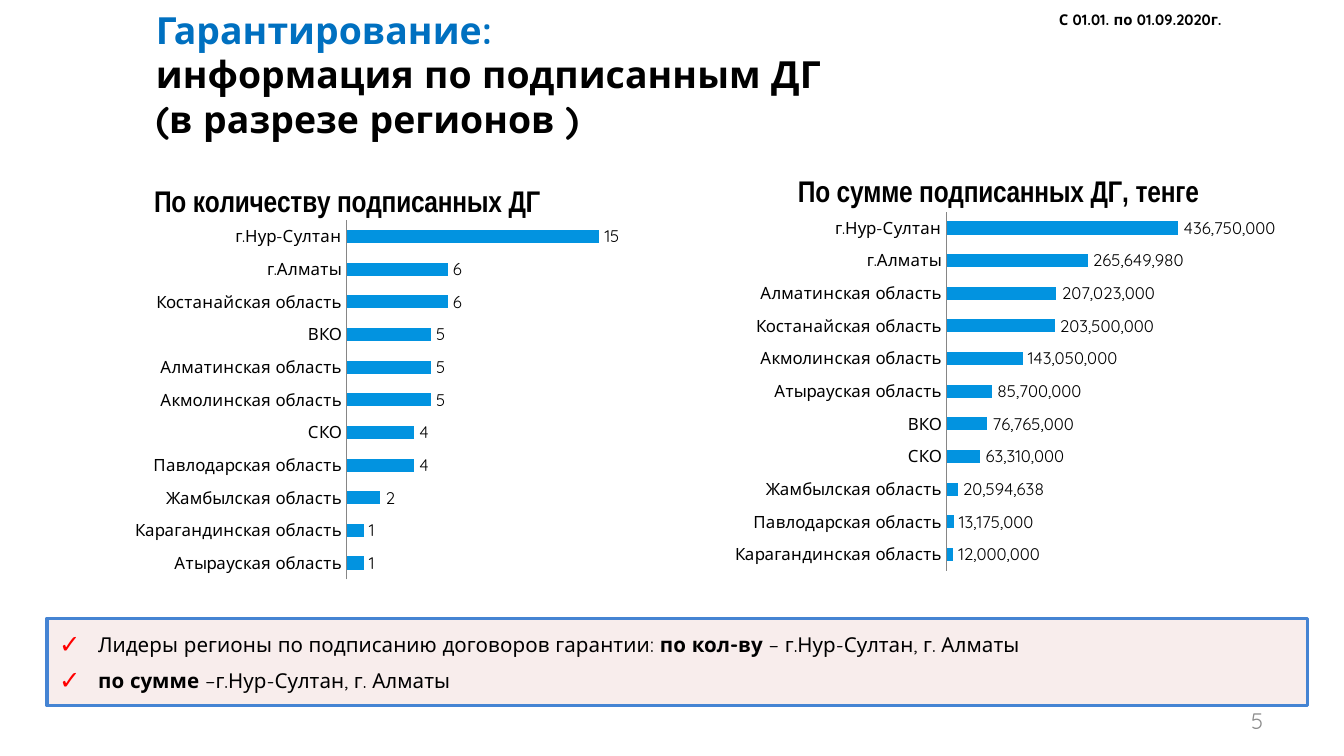
"""Build the slide on signed guarantee agreements by region."""
import dataclasses
import typing

import lxml.etree
import pptx
import pptx.chart.data
import pptx.dml.color
import pptx.enum.chart
import pptx.enum.text
import pptx.oxml.ns
import pptx.util

Inches = pptx.util.Inches
Pt = pptx.util.Pt
FONT = "Quicksand"
COLORS = {
    "text": "000000", "heading": "0070C0", "number": "8C8C8C", "bar": "0293E0",
    "axis": "868686", "panel": "F2DCDB", "border": "4584D3", "check": "FF0000",
}


class Box(typing.NamedTuple):
    left: float
    top: float
    width: float
    height: float


class Run(typing.NamedTuple):
    text: str
    bold: bool = False
    color: str = "text"


@dataclasses.dataclass
class RegionChart:
    title: str
    box: Box
    plot_percent: Box
    maximum: float
    number_format: str
    values: dict[str, int]


TITLE = [
    [Run("Гарантирование: \v", True, "heading"), Run("информация по подписанным ДГ", True)],
    [Run("(в разрезе регионов )", True)],
]
LEADERS = [
    [Run("Лидеры регионы по подписанию договоров гарантии: "), Run("по кол-ву ", True),
     Run("– г.Нур-Султан, г. Алматы")],
    [Run("по сумме ", True), Run("–г.Нур-Султан, г. Алматы")],
]
CHARTS = [
    RegionChart(
        "По количеству подписанных ДГ", Box(0.28, 1.24, 4.61, 3.19),
        Box(49.9, 12.5, 43.5, 83.8), 16, "General",
        {"Атырауская область": 1, "Карагандинская область": 1, "Жамбылская область": 2,
         "Павлодарская область": 4, "СКО": 4, "Акмолинская область": 5,
         "Алматинская область": 5, "ВКО": 5, "Костанайская область": 6,
         "г.Алматы": 6, "г.Нур-Султан": 15}),
    RegionChart(
        "По сумме подписанных ДГ, тенге", Box(5.16, 1.17, 4.54, 3.19),
        Box(41.5, 12.7, 43.5, 83.8), 500_000_000, "#,##0",
        {"Карагандинская область": 12000000, "Павлодарская область": 13175000,
         "Жамбылская область": 20594638, "СКО": 63310000, "ВКО": 76765000,
         "Атырауская область": 85700000, "Акмолинская область": 143050000,
         "Костанайская область": 203500000, "Алматинская область": 207023000,
         "г.Алматы": 265649980, "г.Нур-Султан": 436750000}),
]


def rgb(name: str) -> pptx.dml.color.RGBColor:
    """Return a named colour."""
    return pptx.dml.color.RGBColor.from_string(COLORS[name])


def apply(target: typing.Any, **formats: typing.Any) -> None:
    """Set every given format value on the target."""
    for name, value in formats.items():
        setattr(target, name, value)


def style_font(font: typing.Any, size: float, color: str = "text",
               bold: bool = False, name: str = FONT) -> None:
    """Format a font."""
    apply(font, name=name, size=Pt(size), bold=bold)
    font.color.rgb = rgb(color)


def place(shape: typing.Any, box: Box) -> None:
    """Move a shape to its box."""
    for name, value in box._asdict().items():
        setattr(shape, name, Inches(value))


def add_child(parent: typing.Any, tag: str, **attributes: str) -> typing.Any:
    """Append an XML element with a prefixed tag."""
    return lxml.etree.SubElement(parent, pptx.oxml.ns.qn(tag), attributes)


def add_check_bullet(paragraph: typing.Any) -> None:
    """Give a paragraph a red check mark and a hanging indent."""
    properties = paragraph._p.get_or_add_pPr()
    properties.set("marL", str(Inches(0.3)))
    properties.set("indent", str(Inches(-0.29)))
    add_child(add_child(properties, "a:buClr"), "a:srgbClr", val=COLORS["check"])
    add_child(properties, "a:buSzPct", val="125000")
    add_child(properties, "a:buFont", typeface=FONT)
    add_child(properties, "a:buChar", char="✓")


def write(shape: typing.Any, paragraphs: list[list[Run]], size: float,
          bulleted: bool = False, space_after: float = 0,
          alignment: typing.Any = pptx.enum.text.PP_ALIGN.LEFT, **frame_formats: typing.Any) -> None:
    """Fill a shape with formatted paragraphs."""
    frame = shape.text_frame
    formats = {"word_wrap": True, "auto_size": pptx.enum.text.MSO_AUTO_SIZE.NONE}
    apply(frame, **(formats | frame_formats))
    for index, runs in enumerate(paragraphs):
        paragraph = frame.add_paragraph() if index else frame.paragraphs[0]
        if bulleted:
            add_check_bullet(paragraph)
        apply(paragraph, alignment=alignment, space_before=Pt(0), space_after=Pt(space_after))
        for item in runs:
            run = paragraph.add_run()
            run.text = item.text.rstrip("\v")
            style_font(run.font, size, item.color, item.bold)
            if item.text.endswith("\v"):
                paragraph.add_line_break()


def add_region_chart(slide: typing.Any, region_chart: RegionChart) -> None:
    """Draw a bar chart of regions."""
    data = pptx.chart.data.CategoryChartData(number_format=region_chart.number_format)
    data.categories = list(region_chart.values)
    data.add_series("Series 1", list(region_chart.values.values()))
    chart = slide.shapes.add_chart(
        pptx.enum.chart.XL_CHART_TYPE.BAR_CLUSTERED, *map(Inches, region_chart.box), data).chart
    style_font(chart.font, 10)
    chart.has_legend = False
    title = chart.chart_title
    title.text_frame.text = region_chart.title
    style_font(title.text_frame.paragraphs[0].runs[0].font, 16, bold=True, name="Arial Narrow")
    title.include_in_layout = False

    apply(chart.value_axis, visible=False, has_major_gridlines=False,
          minimum_scale=0, maximum_scale=region_chart.maximum)
    no_tick = pptx.enum.chart.XL_TICK_MARK.NONE
    apply(chart.category_axis, major_tick_mark=no_tick, minor_tick_mark=no_tick)
    style_font(chart.category_axis.tick_labels.font, 9)
    axis_line = chart.category_axis.format.line
    axis_line.color.rgb = rgb("axis")
    axis_line.width = Pt(0.75)

    plot = chart.plots[0]
    apply(plot, gap_width=150, vary_by_categories=False, has_data_labels=True)
    apply(plot.data_labels, show_value=True, number_format=region_chart.number_format,
          number_format_is_linked=False,
          position=pptx.enum.chart.XL_LABEL_POSITION.OUTSIDE_END)
    style_font(plot.data_labels.font, 9)
    fill = plot.series[0].format.fill
    fill.solid()
    fill.fore_color.rgb = rgb("bar")

    area = chart._chartSpace.chart.plotArea
    for old_layout in area.findall(pptx.oxml.ns.qn("c:layout")):
        area.remove(old_layout)
    layout = add_child(area, "c:layout")
    area.insert(0, layout)
    manual = add_child(layout, "c:manualLayout")
    add_child(manual, "c:layoutTarget", val="inner")
    for tag in ("c:xMode", "c:yMode"):
        add_child(manual, tag, val="edge")
    for tag, percent in zip("xywh", region_chart.plot_percent):
        add_child(manual, f"c:{tag}", val=str(percent / 100))


def main() -> None:
    """Build and save the presentation."""
    presentation = pptx.Presentation()
    apply(presentation, slide_width=Inches(10), slide_height=Inches(10 * 9 / 16))
    slide = presentation.slides.add_slide(presentation.slide_layouts[1])
    anchor = pptx.enum.text.MSO_ANCHOR
    right = pptx.enum.text.PP_ALIGN.RIGHT

    place(slide.shapes.title, Box(1.06, 0, 7.01, 0.89))
    write(slide.shapes.title, TITLE, 20, vertical_anchor=anchor.TOP)

    leaders = slide.placeholders[1]
    place(leaders, Box(0.35, 4.6, 9.38, 0.65))
    leaders.fill.solid()
    leaders.fill.fore_color.rgb = rgb("panel")
    color = leaders.fill._xPr.find(".//" + pptx.oxml.ns.qn("a:srgbClr"))
    add_child(color, "a:alpha", val="50000")
    leaders.line.color.rgb = rgb("border")
    leaders.line.width = Pt(1.75)
    write(leaders, LEADERS, 11, bulleted=True, space_after=6, vertical_anchor=anchor.MIDDLE,
          margin_left=Inches(0.08), margin_right=Inches(0.08),
          margin_top=Inches(0.04), margin_bottom=Inches(0.04))

    period = slide.shapes.add_textbox(*map(Inches, Box(7.78, 0.03, 1.48, 0.24)))
    write(period, [[Run("С 01.01. по 01.09.2020г.", True)]], 8, word_wrap=False)
    number = slide.shapes.add_textbox(*map(Inches, Box(7.17, 5.21, 2.33, 0.3)))
    write(number, [[Run("5", color="number")]], 12, alignment=right,
          vertical_anchor=anchor.MIDDLE)

    for region_chart in CHARTS:
        add_region_chart(slide, region_chart)
    presentation.save("out.pptx")


if __name__ == "__main__":
    main()
